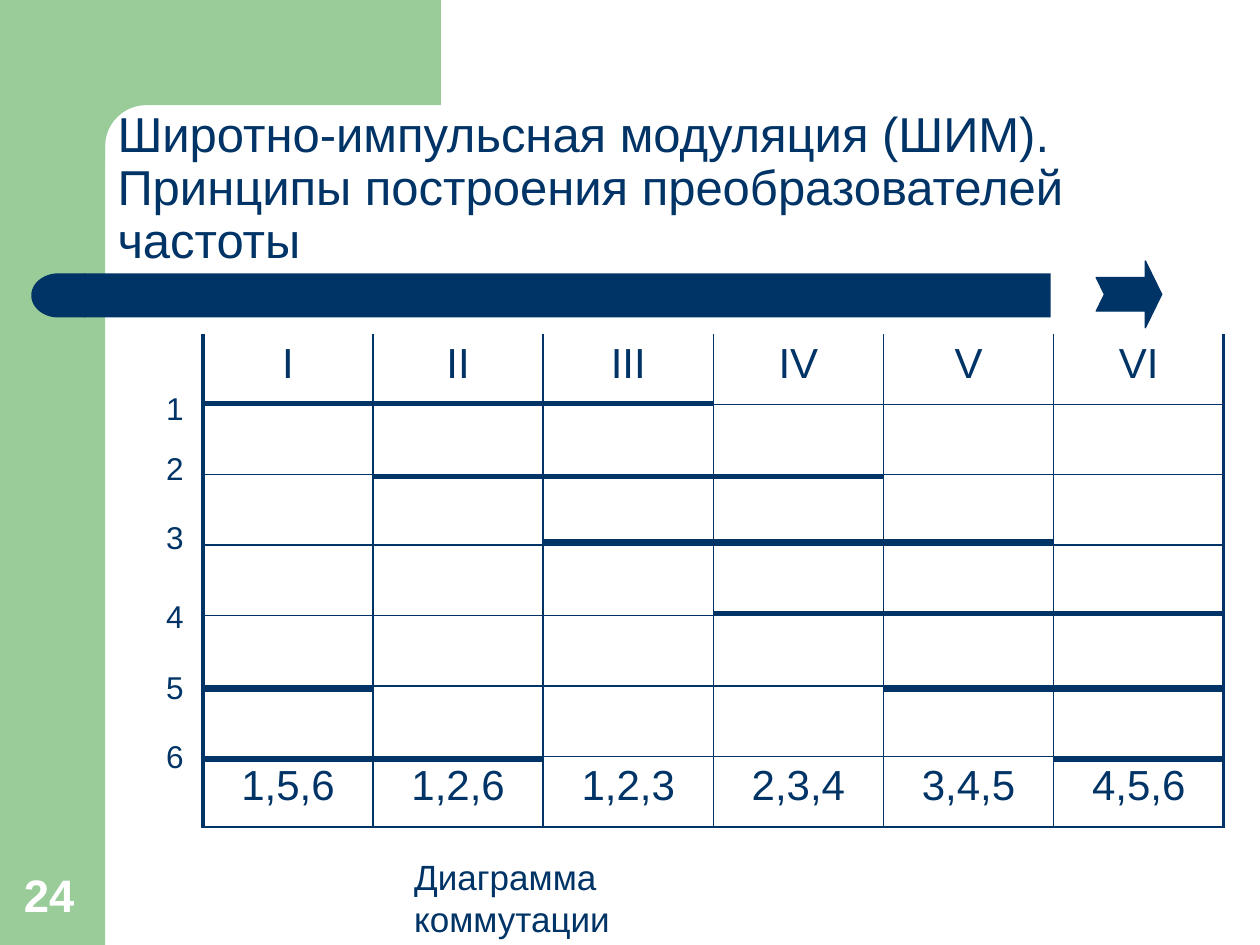
import math

from lxml import etree
from pptx import Presentation
from pptx.dml.color import RGBColor
from pptx.enum.shapes import MSO_CONNECTOR, MSO_SHAPE
from pptx.enum.text import MSO_ANCHOR, PP_ALIGN
from pptx.oxml.ns import qn
from pptx.util import Cm, Pt

NAVY = RGBColor(0x00, 0x33, 0x66)
GREEN = RGBColor(0x99, 0xCC, 0x99)
WHITE = RGBColor(0xFF, 0xFF, 0xFF)

RECT = MSO_SHAPE.RECTANGLE
DELAY = MSO_SHAPE.FLOWCHART_DELAY
ARROW = MSO_SHAPE.NOTCHED_RIGHT_ARROW
STRAIGHT = MSO_CONNECTOR.STRAIGHT
TOP, BOTTOM = MSO_ANCHOR.TOP, MSO_ANCHOR.BOTTOM
CENTER = PP_ALIGN.CENTER

INTERVALS = ["I", "II", "III", "IV", "V", "VI"]
N = len(INTERVALS)
SPAN = 3  # intervals during which each switch conducts
GRID_X, GRID_Y, COL_W, ROW_H = 4.09, 6.73, 3.43, 1.42
BAR_Y = [8.13, 9.6, 10.92, 12.37, 13.89, 15.3]
LABEL_Y = [7.72, 8.92, 10.31, 11.91, 13.34, 14.73]


class SlideBuilder:
    font = "Arial"

    def __init__(self, slide):
        self.slide = slide
        self.shapes = slide.shapes

    def paint(self, sp, color):
        sp.shadow.inherit = False
        sp.fill.solid()
        sp.fill.fore_color.rgb = color
        sp.line.fill.background()

    def shape(self, kind, x, y, w, h, color):
        sp = self.shapes.add_shape(kind, Cm(x), Cm(y), Cm(w), Cm(h))
        self.paint(sp, color)
        return sp

    def outline(self, points, color):
        pts = [(Cm(x), Cm(y)) for x, y in points]
        fb = self.shapes.build_freeform(*pts[0])
        fb.add_line_segments(pts[1:])
        self.paint(fb.convert_to_shape(), color)

    def run(self, p, text, size, color=NAVY, bold=False):
        r = p.add_run()
        r.text = text
        r.font.name = self.font
        r.font.size = Pt(size)
        r.font.bold = bold
        r.font.color.rgb = color

    def text(self, lines, x, y, w, h, size, color=NAVY, bold=False,
             anchor=TOP, spacing=1.0, wrap=True):
        """Add a text box whose lines are joined by line breaks."""
        tf = self.shapes.add_textbox(Cm(x), Cm(y), Cm(w), Cm(h)).text_frame
        tf.word_wrap = wrap
        tf.vertical_anchor = anchor
        p = tf.paragraphs[0]
        p.line_spacing = spacing
        for i, line in enumerate(lines):
            if i:
                p.add_line_break()
            self.run(p, line, size, color, bold)
        return tf

    def line(self, x1, x2, y, width):
        cn = self.shapes.add_connector(STRAIGHT, Cm(x1), Cm(y), Cm(x2), Cm(y))
        cn.line.color.rgb = NAVY
        cn.line.width = Pt(width)
        etree.SubElement(cn._element.spPr, qn("a:effectLst"))

    def border(self, cell, side, width):
        """Draw one cell side; a width of 0 leaves it open."""
        ln = etree.SubElement(cell._tc.get_or_add_tcPr(), qn(f"a:ln{side}"),
                              w=str(Pt(width)))
        if width:
            fill = etree.SubElement(ln, qn("a:solidFill"))
            etree.SubElement(fill, qn("a:srgbClr"), val=str(NAVY))
        else:
            etree.SubElement(ln, qn("a:noFill"))

    def table(self, rows, x, y, col_w, row_h, size):
        n_rows, n_cols = len(rows), len(rows[0])
        table = self.shapes.add_table(n_rows, n_cols, Cm(x), Cm(y),
                                      Cm(col_w * n_cols), Cm(row_h * n_rows)).table
        table.first_row = table.horz_banding = False
        for col in table.columns:
            col.width = Cm(col_w)
        for i, values in enumerate(rows):
            table.rows[i].height = Cm(row_h)
            for j, value in enumerate(values):
                cell = table.cell(i, j)
                self.border(cell, "L", 1 if j else 2.25)
                self.border(cell, "R", 1 if j < n_cols - 1 else 2.25)
                self.border(cell, "T", 1 if i else 0)
                self.border(cell, "B", 1)
                cell.fill.background()
                if value:
                    p = cell.text_frame.paragraphs[0]
                    p.alignment = CENTER
                    self.run(p, value, size)


def conducts(switch, interval):
    return (interval - switch) % N < SPAN


def main():
    prs = Presentation()
    prs.slide_width, prs.slide_height = Cm(25.4), Cm(19.05)
    s = SlideBuilder(prs.slides.add_slide(prs.slide_layouts[6]))

    # Side band, rounded corner and title rule
    s.shape(RECT, 0, 0, 2.12, 19.05, GREEN)
    radius, steps = 0.83, 12
    angles = [math.pi / 2 * i / steps for i in range(steps + 1)]
    corner = [(2.95 - radius * math.sin(a), 2.95 - radius * math.cos(a))
              for a in angles]
    s.outline([(8.89, 0), (8.89, 2.12), *corner, (2.12, 3.25),
               (1.27, 3.25), (1.27, 0)], GREEN)
    s.shape(RECT, 1.7, 5.51, 19.48, 0.89, NAVY)
    s.shape(DELAY, 0.63, 5.51, 1.09, 0.89, NAVY).rotation = 180

    s.text(["24"], 0.23, 17.35, 1.63, 1.35, 26, WHITE, bold=True, anchor=BOTTOM)
    s.text(["Широтно-импульсная модуляция (ШИМ).",
            "Принципы построения преобразователей частоты"],
           2.12, 2.36, 22.02, 3.18, 28, anchor=BOTTOM, spacing=0.9)
    caption = s.text(["Диаграмма коммутации"], 8.1, 17.12, 8.31, 1.09, 20)
    caption.margin_right = Cm(2.5)

    # Switching diagram
    active = [",".join(str(k + 1) for k in range(N) if conducts(k, i))
              for i in range(N)]
    blank = [[""] * N for _ in range(N - 1)]
    s.table([INTERVALS, *blank, active], GRID_X, GRID_Y, COL_W, ROW_H, 24)
    for k, y in enumerate(BAR_Y):
        end = k + SPAN
        bars = [(k, min(end, N))]
        if end > N:
            bars.append((0, end - N))
        for first, last in bars:
            s.line(GRID_X + first * COL_W, GRID_X + last * COL_W, y, 3)
    for k, y in enumerate(LABEL_Y):
        s.text([str(k + 1)], 3.1, y, 0.86, 1.02, 18, wrap=False)

    arrow = s.shape(ARROW, 22.1, 5.26, 1.32, 1.35, NAVY)
    arrow.adjustments[0], arrow.adjustments[1] = 0.5, 0.25
    arrow.line.color.rgb = NAVY
    arrow.line.width = Pt(0.75)

    prs.save("out.pptx")


if __name__ == "__main__":
    main()
